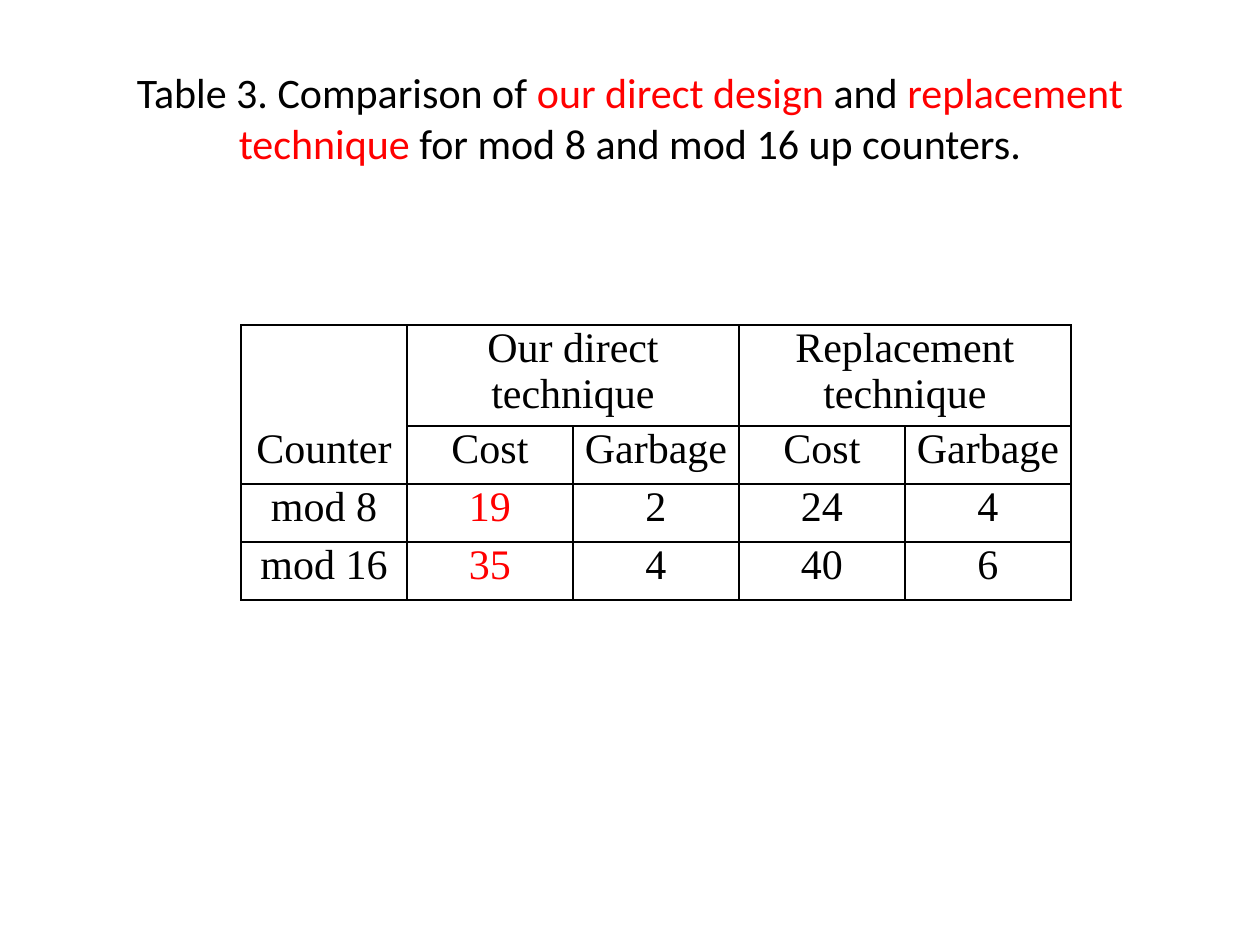
from lxml.etree import SubElement
from pptx import Presentation
from pptx.dml.color import RGBColor
from pptx.enum.text import MSO_ANCHOR, PP_ALIGN
from pptx.oxml.ns import qn
from pptx.util import Emu, Pt

BLACK = RGBColor(0x00, 0x00, 0x00)
RED = RGBColor(0xFF, 0x00, 0x00)
PX_PER_INCH = 126


def px(length):
    return Emu(round(length * 914400 / PX_PER_INCH))


class SlideBuilder:
    title_font = "Calibri"
    table_font = "Times New Roman"
    font_size = Pt(24)
    border_width = Pt(1)
    cell_margin = 8

    def __init__(self, slide):
        self.slide = slide

    def format_run(self, run, font_name, color):
        run.font.name = font_name
        run.font.size = self.font_size
        run.font.color.rgb = color

    def title(self, left, top, width, height, pieces):
        shape = self.slide.shapes.add_textbox(px(left), px(top), px(width), px(height))
        text_frame = shape.text_frame
        text_frame.word_wrap = True
        text_frame.vertical_anchor = MSO_ANCHOR.MIDDLE
        paragraph = text_frame.paragraphs[0]
        paragraph.alignment = PP_ALIGN.CENTER
        for text, color in pieces:
            run = paragraph.add_run()
            run.text = text
            self.format_run(run, self.title_font, color)

    def borders(self, cell, hidden):
        properties = cell._tc.get_or_add_tcPr()
        for side in "LRTB":
            line = SubElement(properties, qn(f"a:ln{side}"), w=str(self.border_width))
            if side in hidden:
                SubElement(line, qn("a:noFill"))
            else:
                fill = SubElement(line, qn("a:solidFill"))
                SubElement(fill, qn("a:srgbClr"), val=str(BLACK))

    def cell(self, cell, text, color, hidden_borders):
        cell.margin_left = cell.margin_right = px(self.cell_margin)
        cell.margin_top = cell.margin_bottom = 0
        self.borders(cell, hidden_borders)
        cell.fill.background()
        if text:
            cell.text_frame.text = text
            paragraph = cell.text_frame.paragraphs[0]
            paragraph.alignment = PP_ALIGN.CENTER
            self.format_run(paragraph.runs[0], self.table_font, color)

    def table(self, left, top, column_width, row_heights, rows, spans, red_cells, hidden_borders):
        column_count = len(rows[0])
        frame = self.slide.shapes.add_table(
            len(rows), column_count, px(left), px(top),
            px(column_width * column_count), px(sum(row_heights)))
        table = frame.table
        table.first_row = table.horz_banding = False
        for column in table.columns:
            column.width = px(column_width)
        for row, height in zip(table.rows, row_heights):
            row.height = px(height)
        for start, end in spans:
            table.cell(*start).merge(table.cell(*end))
        for r, texts in enumerate(rows):
            for c, text in enumerate(texts):
                color = RED if (r, c) in red_cells else BLACK
                self.cell(table.cell(r, c), text, color, hidden_borders.get((r, c), ""))


def main():
    presentation = Presentation()
    presentation.slide_width = px(1260)
    presentation.slide_height = px(945)
    slide = presentation.slides.add_slide(presentation.slide_layouts[6])
    builder = SlideBuilder(slide)

    # Title
    builder.title(63, 38, 1134, 158, [
        ("Table 3. Comparison of", BLACK),
        (" our direct design ", RED),
        ("and ", BLACK),
        ("replacement technique ", RED),
        ("for mod 8 and mod 16 up counters.", BLACK),
    ])

    # Comparison table: the counter heading has no line above it
    builder.table(
        241, 325, 166, [93, 58, 58, 58],
        rows=[
            ["", "Our direct technique", "", "Replacement technique", ""],
            ["Counter", "Cost", "Garbage", "Cost", "Garbage"],
            ["mod 8", "19", "2", "24", "4"],
            ["mod 16", "35", "4", "40", "6"],
        ],
        spans=[((0, 1), (0, 2)), ((0, 3), (0, 4))],
        red_cells={(2, 1), (3, 1)},
        hidden_borders={(0, 0): "B", (1, 0): "T"},
    )

    presentation.save("out.pptx")


if __name__ == "__main__":
    main()
